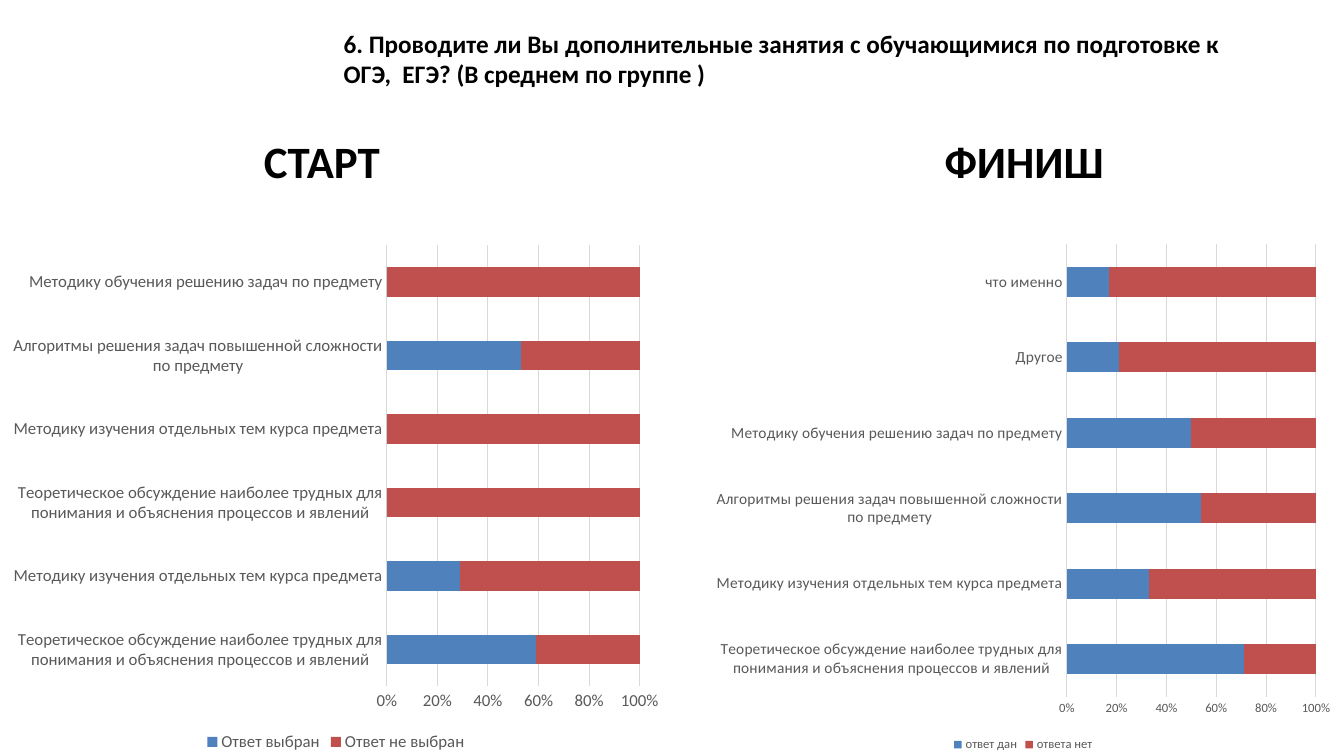
import pptx
import pptx.chart.data
import pptx.dml.color
import pptx.enum.chart
import pptx.enum.text
import pptx.util

COLORS = {
    "text": "000000",
    "label": "595959",
    "grid": "D9D9D9",
    "chosen": "4F81BD",
    "not_chosen": "C0504D",
}

THEORY = "Теоретическое обсуждение наиболее трудных для понимания и объяснения процессов и явлений"
TOPICS = "Методику изучения отдельных тем курса предмета"
ALGORITHMS = "Алгоритмы решения задач повышенной сложности по предмету"
PROBLEMS = "Методику обучения решению задач по предмету"

START_ANSWERS = [(THEORY, 59), (TOPICS, 29), (THEORY, 0),
                 (TOPICS, 0), (ALGORITHMS, 53), (PROBLEMS, 0)]
FINISH_ANSWERS = [(THEORY, 71), (TOPICS, 33), (ALGORITHMS, 54),
                  (PROBLEMS, 50), ("Другое", 21), ("что именно", 17)]


class SurveySlide:
    """Adds styled elements; boxes are (left, top, width, height) in percent of the slide."""

    font_name = "Calibri"

    def __init__(self, presentation):
        self.width = presentation.slide_width
        self.height = presentation.slide_height
        self.slide = presentation.slides.add_slide(presentation.slide_layouts[6])

    def place(self, box):
        sides = (self.width, self.height) * 2
        return [round(side * share / 100) for side, share in zip(sides, box)]

    def color(self, name):
        return pptx.dml.color.RGBColor.from_string(COLORS[name])

    def style_font(self, font, size, color, bold=False):
        font.name = self.font_name
        font.size = pptx.util.Pt(size)
        font.bold = bold
        font.color.rgb = self.color(color)

    def style_line(self, line):
        line.color.rgb = self.color("grid")
        line.width = pptx.util.Pt(0.75)

    def heading(self, text, box, size, wrap):
        frame = self.slide.shapes.add_textbox(*self.place(box)).text_frame
        frame.word_wrap = wrap
        frame.auto_size = pptx.enum.text.MSO_AUTO_SIZE.SHAPE_TO_FIT_TEXT
        paragraph = frame.paragraphs[0]
        paragraph.text = text
        self.style_font(paragraph.font, size, "text", bold=True)

    def answer_chart(self, answers, series_names, box, category_size, small_size):
        """Stacked bars of each answer's percentage and its remainder to 100."""
        categories, chosen = zip(*answers)
        data = pptx.chart.data.CategoryChartData()
        data.categories = categories
        for name, values in zip(series_names, (chosen, [100 - value for value in chosen])):
            data.add_series(name, values)

        chart = self.slide.shapes.add_chart(
            pptx.enum.chart.XL_CHART_TYPE.BAR_STACKED_100, *self.place(box), data).chart
        self.style_font(chart.font, 10, "text")
        chart.has_title = False
        chart.has_legend = True
        chart.legend.position = pptx.enum.chart.XL_LEGEND_POSITION.BOTTOM
        chart.legend.include_in_layout = False
        self.style_font(chart.legend.font, small_size, "label")

        plot = chart.plots[0]
        plot.gap_width = 150
        plot.overlap = 100
        plot.vary_by_categories = False
        for series, color in zip(plot.series, ("chosen", "not_chosen")):
            series.format.fill.solid()
            series.format.fill.fore_color.rgb = self.color(color)

        for axis, size in ((chart.category_axis, category_size), (chart.value_axis, small_size)):
            axis.major_tick_mark = pptx.enum.chart.XL_TICK_MARK.NONE
            axis.minor_tick_mark = pptx.enum.chart.XL_TICK_MARK.NONE
            self.style_font(axis.tick_labels.font, size, "label")
        self.style_line(chart.category_axis.format.line)
        value_axis = chart.value_axis
        value_axis.format.line.fill.background()
        value_axis.has_major_gridlines = True
        self.style_line(value_axis.major_gridlines.format.line)
        value_axis.tick_labels.number_format = "0%"
        value_axis.tick_labels.number_format_is_linked = False


def main():
    presentation = pptx.Presentation()
    presentation.slide_width = pptx.util.Inches(13.33)
    presentation.slide_height = pptx.util.Inches(7.5)
    survey = SurveySlide(presentation)

    survey.heading(
        "6. Проводите ли Вы дополнительные занятия с обучающимися по подготовке к ОГЭ,  ЕГЭ? "
        "(В среднем по группе )", (24.83, 3.07, 66.84, 13.87), 18, wrap=True)
    survey.answer_chart(START_ANSWERS, ("Ответ выбран", "Ответ не выбран"),
                        (0, 31.07, 50, 68.93), 12, 12)
    survey.heading("СТАРТ", (18.9, 17.07, 10.2, 8.53), 32, wrap=False)
    survey.heading("ФИНИШ", (69.54, 17.07, 13.5, 8.53), 32, wrap=False)
    survey.answer_chart(FINISH_ANSWERS, ("ответ дан", "ответа нет"),
                        (52.36, 30.93, 47.56, 69.07), 11, 9)

    presentation.save("out.pptx")


if __name__ == "__main__":
    main()
